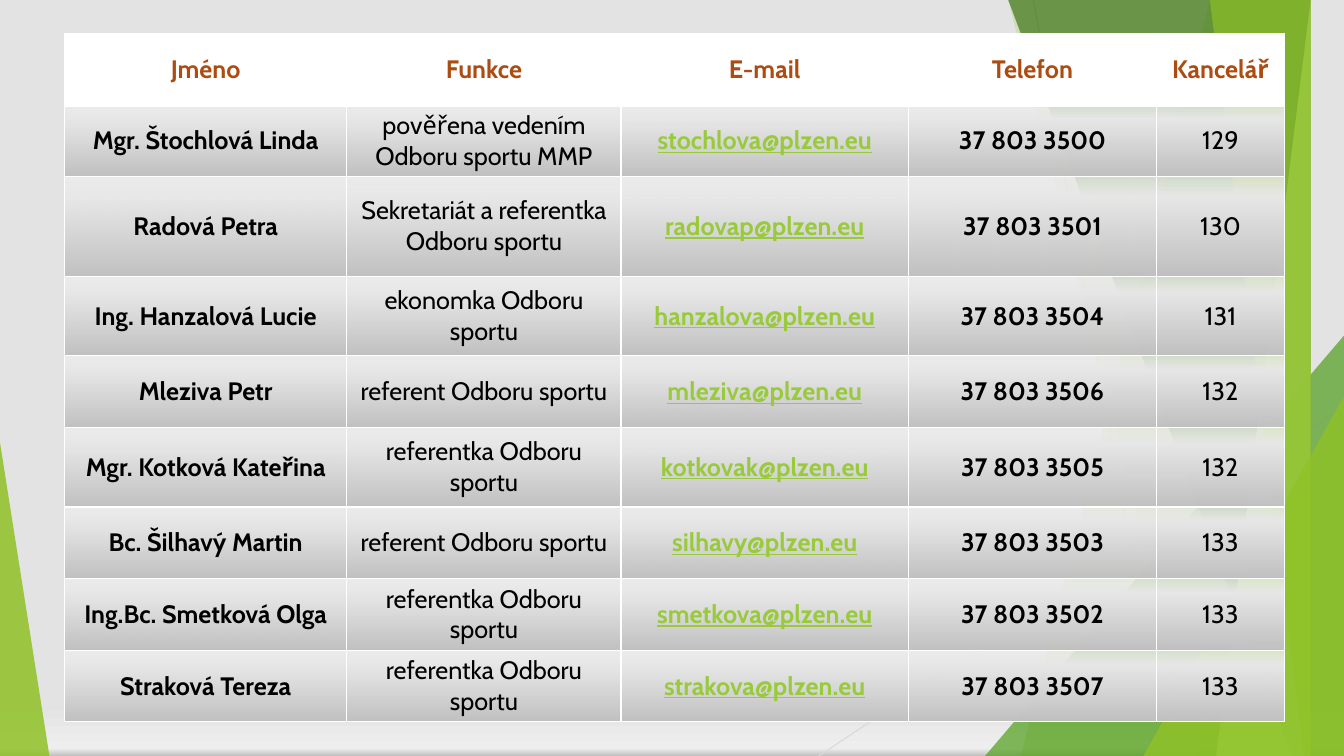
from dataclasses import dataclass

import pptx
import pptx.dml.color
import pptx.enum.shapes
import pptx.enum.text
import pptx.oxml
import pptx.oxml.ns
import pptx.util
from pptx.util import Inches

SHAPES = pptx.enum.shapes.MSO_SHAPE
NAMESPACE = pptx.oxml.ns.nsdecls("a")


@dataclass(frozen=True)
class Theme:
    font: str = "Cabin"
    size: int = 18
    header: str = "AD4C12"
    text: str = "000000"
    email: str = "99CA3C"
    white: str = "FFFFFF"
    green: str = "90C226"
    mid_green: str = "54A021"
    dark_green: str = "3F7819"
    pale_green: str = "C0E474"
    line_gray: str = "BFBFBF"
    pale_gray: str = "D9D9D9"
    # Gradient stops: position, colour, opacity (all but colour in percent)
    background: tuple = ((0, "E3E3E3", 100), (93, "E3E3E3", 100),
                         (99, "EEEEEE", 79), (100, "C0C0C0", 100))
    cell: tuple = ((0, "EEEEEE", 79), (21, "E8E8E8", 100), (100, "C0C0C0", 100))


THEME = Theme()
SLIDE_BOX = (0, 0, 13.33, 7.5)
TABLE_BOX = (0.64, 0.33, 12.11, 6.81)
COLUMN_WIDTHS = (2.8, 2.72, 2.85, 2.46, 1.27)
ROW_HEIGHTS = (0.71, 0.71, 0.99, 0.78, 0.71, 0.78, 0.71, 0.71, 0.71)
EMAIL_COLUMN = 2
BOLD_COLUMNS = (0, 2, 3)
TALL_MARGIN_CELLS = ((3, 1), (5, 1))
CONTACTS = (
    ("Jméno", "Funkce", "E-mail", "Telefon", "Kancelář"),
    ("Mgr. Štochlová Linda", "pověřena vedením Odboru sportu MMP",
     "stochlova@plzen.eu", "37 803 3500", "129"),
    ("Radová Petra", "Sekretariát a referentka Odboru sportu",
     "radovap@plzen.eu", "37 803 3501", "130"),
    ("Ing. Hanzalová Lucie", "ekonomka Odboru sportu",
     "hanzalova@plzen.eu", "37 803 3504", "131"),
    ("Mleziva Petr", "referent Odboru sportu",
     "mleziva@plzen.eu", "37 803 3506", "132"),
    ("Mgr. Kotková Kateřina", "referentka Odboru sportu",
     "kotkovak@plzen.eu", "37 803 3505", "132"),
    ("Bc. Šilhavý Martin", "referent Odboru sportu",
     "silhavy@plzen.eu", "37 803 3503", "133"),
    ("Ing.Bc. Smetková Olga", "referentka Odboru sportu",
     "smetkova@plzen.eu", "37 803 3502", "133"),
    ("Straková Tereza", "referentka Odboru sportu",
     "strakova@plzen.eu", "37 803 3507", "133"),
)


def rgb(color):
    return pptx.dml.color.RGBColor.from_string(color)


def vertical_gradient(stops):
    """Return a gradFill element running from top to bottom."""
    marks = "".join(
        f'<a:gs pos="{position * 1000}"><a:srgbClr val="{color}">'
        f'<a:alpha val="{opacity * 1000}"/></a:srgbClr></a:gs>'
        for position, color, opacity in stops)
    return pptx.oxml.parse_xml(
        f'<a:gradFill {NAMESPACE} rotWithShape="1"><a:gsLst>{marks}</a:gsLst>'
        '<a:lin ang="5400000" scaled="0"/></a:gradFill>')


def paint_background(slide):
    slide.background.fill.gradient()
    fill = slide.element.find(".//" + pptx.oxml.ns.qn("a:gradFill"))
    fill.getparent().replace(fill, vertical_gradient(THEME.background))


def add_line(slide, start, end, color):
    line = slide.shapes.add_connector(
        pptx.enum.shapes.MSO_CONNECTOR.STRAIGHT,
        *(Inches(value) for value in (*start, *end)))
    line.line.color.rgb = rgb(color)
    line.line.width = pptx.util.Pt(0.75)
    line.element.spPr.append(pptx.oxml.parse_xml(f"<a:effectLst {NAMESPACE}/>"))


def paint_facet(shape, color, opacity):
    shape.shadow.inherit = False
    shape.fill.solid()
    shape.fill.fore_color.rgb = rgb(color)
    shape.line.fill.background()
    tint = shape.element.spPr.find(".//" + pptx.oxml.ns.qn("a:srgbClr"))
    tint.append(pptx.oxml.parse_xml(
        f'<a:alpha {NAMESPACE} val="{opacity * 1000}"/>'))


def add_panel(slide, box, top_x, bottom_x, color, opacity):
    """Fill from a slanted left edge to the right side of the box."""
    left, top, width, height = box
    right, bottom = left + width, top + height
    outline = slide.shapes.build_freeform(left + top_x, top, scale=Inches(1))
    outline.add_line_segments(
        ((right, top), (right, bottom), (left + bottom_x, bottom)), close=True)
    paint_facet(outline.convert_to_shape(), color, opacity)


def add_corner(slide, box, width, height, apex, color, opacity):
    """Add a right triangle in the bottom left (apex 0) or right (apex 1) corner."""
    left, top, box_width, box_height = box
    corner = slide.shapes.add_shape(
        SHAPES.ISOSCELES_TRIANGLE,
        Inches(left + apex * (box_width - width)),
        Inches(top + box_height - height), Inches(width), Inches(height))
    corner.adjustments[0] = apex
    paint_facet(corner, color, opacity)


def add_backdrop(slide, box):
    left, top, width, height = box
    right, bottom = left + width, top + height
    add_line(slide, (left + 10.25, top), (left + 11.58, bottom), THEME.line_gray)
    add_line(slide, (right, top + 4.03), (left + 8.12, bottom), THEME.pale_gray)
    add_panel(slide, box, 12.28, 10.04, THEME.green, 30)
    add_panel(slide, box, 10.5, 11.83, THEME.green, 20)
    add_corner(slide, box, 3.56, 4.17, 1, THEME.mid_green, 72)
    add_panel(slide, box, 10.21, 12.91, THEME.dark_green, 70)
    add_panel(slide, box, 13.03, 11.92, THEME.pale_green, 70)
    add_panel(slide, box, 11.96, 13.18, THEME.green, 65)
    add_corner(slide, box, 1.99, 3.57, 1, THEME.green, 80)
    add_corner(slide, box, 0.49, 3.11, 0, THEME.green, 85)


def paint_cell(cell, row):
    properties = cell._tc.get_or_add_tcPr()
    widths = {"L": 1, "R": 1, "T": 3 if row == 1 else 1, "B": 3 if row == 0 else 1}
    for side, width in widths.items():
        properties.append(pptx.oxml.parse_xml(
            f'<a:ln{side} {NAMESPACE} w="{pptx.util.Pt(width)}"><a:solidFill>'
            f'<a:srgbClr val="{THEME.white}"/></a:solidFill></a:ln{side}>'))
    if row == 0:
        cell.fill.solid()
        cell.fill.fore_color.rgb = rgb(THEME.white)
    else:
        properties.append(vertical_gradient(THEME.cell))


def write_cell(cell, text, row, column):
    is_header = row == 0
    is_email = column == EMAIL_COLUMN and not is_header
    cell.text_frame.text = text
    cell.vertical_anchor = pptx.enum.text.MSO_ANCHOR.MIDDLE
    if is_email or (row, column) in TALL_MARGIN_CELLS:
        cell.margin_left = cell.margin_right = Inches(0.05)
        cell.margin_top = cell.margin_bottom = Inches(0.09)
    para = cell.text_frame.paragraphs[0]
    para.alignment = pptx.enum.text.PP_ALIGN.CENTER
    font = para.runs[0].font
    font.name = THEME.font
    font.size = pptx.util.Pt(THEME.size)
    font.bold = is_header or column in BOLD_COLUMNS
    font.underline = is_email
    color = THEME.header if is_header else THEME.email if is_email else THEME.text
    font.color.rgb = rgb(color)


def add_contacts(slide, box):
    table = slide.shapes.add_table(
        len(CONTACTS), len(COLUMN_WIDTHS), *(Inches(value) for value in box)).table
    table.first_row = table.horz_banding = False
    for column, width in zip(table.columns, COLUMN_WIDTHS):
        column.width = Inches(width)
    for row, (contact, height) in enumerate(zip(CONTACTS, ROW_HEIGHTS)):
        table.rows[row].height = Inches(height)
        for column, text in enumerate(contact):
            cell = table.cell(row, column)
            paint_cell(cell, row)
            write_cell(cell, text, row, column)


def main():
    deck = pptx.Presentation()
    deck.slide_width, deck.slide_height = (Inches(value) for value in SLIDE_BOX[2:])
    slide = deck.slides.add_slide(deck.slide_layouts[6])
    paint_background(slide)
    add_backdrop(slide, SLIDE_BOX)
    add_contacts(slide, TABLE_BOX)
    deck.save("out.pptx")


if __name__ == "__main__":
    main()
